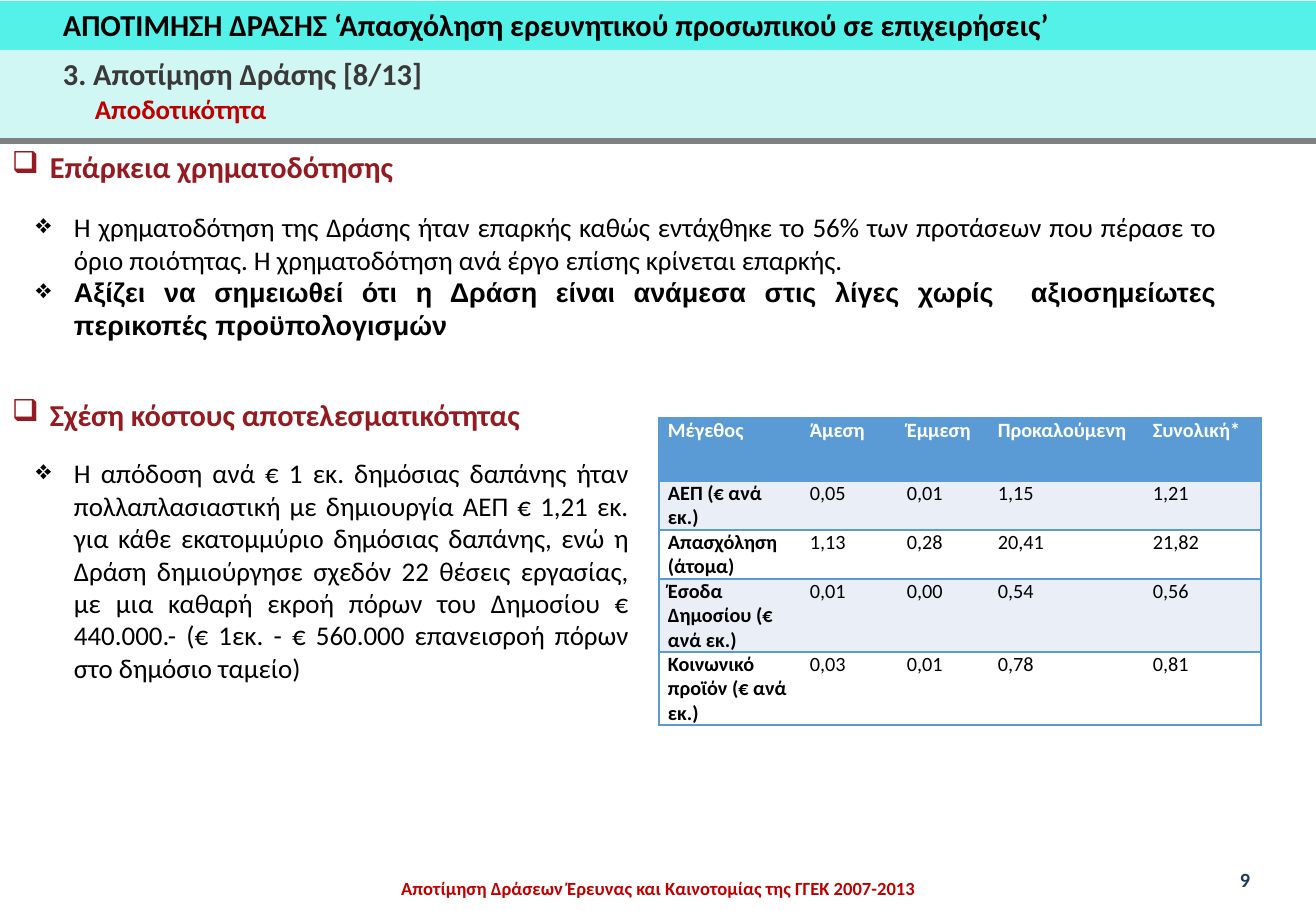
from lxml.etree import SubElement
from pptx import Presentation
from pptx.dml.color import RGBColor
from pptx.enum.shapes import MSO_CONNECTOR as Connector, MSO_SHAPE as Shape
from pptx.enum.text import PP_ALIGN as Align
from pptx.oxml.ns import qn
from pptx.util import Pt

SCALE = 7526
WIDTH, HEIGHT = 1316, 911
INDENT = 38
COLORS = {
    "title band": "53F1E8", "section band": "D0F7F3", "rule": "808080",
    "black": "000000", "white": "FFFFFF", "section": "3B3838",
    "red": "C00000", "heading": "931B21", "page": "203864",
    "table": "5B9BD5", "stripe": "EAEFF7",
}

BANDS = [("title band", 1, 49), ("section band", 50, 91)]
RULE_Y = 141

LABELS = [
    ("ΑΠΟΤΙΜΗΣΗ ΔΡΑΣΗΣ ‘Απασχόληση ερευνητικού προσωπικού σε επιχειρήσεις’",
     (51, 0, 1256, 49), 18, "black"),
    ("3. Αποτίμηση Δράσης [8/13]", (51, 49, 395, 49), 18, "section"),
    ("Αποδοτικότητα", (83, 87, 200, 45), 16, "red"),
    ("9", (1228, 861, 63, 36), 12, "page"),
]
FOOTER = "Aποτίμηση Δράσεων Έρευνας και Καινοτομίας της ΓΓΕΚ 2007-2013"

HEADINGS = [
    ("Επάρκεια χρηματοδότησης", (0, 142, 742, 49)),
    ("Σχέση κόστους αποτελεσματικότητας", (0, 390, 742, 49)),
]
BODIES = [
    ((24, 205, 1205, 143), [
        ("Η χρηματοδότηση της Δράσης ήταν επαρκής καθώς εντάχθηκε το 56% των "
         "προτάσεων που πέρασε το όριο ποιότητας. Η χρηματοδότηση ανά έργο "
         "επίσης κρίνεται επαρκής.", "Calibri", False),
        ("Αξίζει να σημειωθεί ότι η Δράση είναι ανάμεσα στις λίγες χωρίς  "
         "αξιοσημείωτες περικοπές προϋπολογισμών", "Arial", True),
    ]),
    ((24, 451, 617, 242), [
        ("Η απόδοση ανά € 1 εκ. δημόσιας δαπάνης ήταν πολλαπλασιαστική με "
         "δημιουργία ΑΕΠ € 1,21 εκ. για κάθε εκατομμύριο δημόσιας δαπάνης, "
         "ενώ η Δράση δημιούργησε σχεδόν 22 θέσεις εργασίας, με μια καθαρή "
         "εκροή πόρων του Δημοσίου € 440.000.- (€ 1εκ. - € 560.000 "
         "επανεισροή πόρων στο δημόσιο ταμείο)", "Calibri", False),
    ]),
]

TABLE_LEFT, TABLE_TOP = 659, 418
COLUMN_WIDTHS = [142, 97, 91, 155, 117]
ROW_HEIGHTS = [63, 49, 49, 73, 73]
ROWS = [
    ("Μέγεθος", "Άμεση", "Έμμεση", "Προκαλούμενη", "Συνολική*"),
    ("ΑΕΠ (€ ανά εκ.)", "0,05", "0,01", "1,15", "1,21"),
    ("Απασχόληση (άτομα)", "1,13", "0,28", "20,41", "21,82"),
    ("Έσοδα Δημοσίου (€ ανά εκ.)", "0,01", "0,00", "0,54", "0,56"),
    ("Κοινωνικό προϊόν (€ ανά εκ.)", "0,03", "0,01", "0,78", "0,81"),
]


def px(*lengths):
    return [length * SCALE for length in lengths]


def color(name):
    return RGBColor.from_string(COLORS[name])


def style(paragraph, size, color_name, bold=True, font="Calibri"):
    paragraph.font.name = font
    paragraph.font.size = Pt(size)
    paragraph.font.bold = bold
    paragraph.font.color.rgb = color(color_name)


def add_text(box):
    frame = slide.shapes.add_textbox(*px(*box)).text_frame
    frame.word_wrap = True
    return frame


def add_bullet(paragraph, character):
    properties = paragraph._p.get_or_add_pPr()
    properties.set("marL", str(INDENT * SCALE))
    properties.set("indent", str(-INDENT * SCALE))
    SubElement(properties, qn("a:buChar"), char=character)


def add_border(cell, side, visible):
    line = SubElement(cell._tc.get_or_add_tcPr(), qn(f"a:ln{side}"), w=str(Pt(1)))
    if visible:
        fill = SubElement(line, qn("a:solidFill"))
        SubElement(fill, qn("a:srgbClr"), val=COLORS["table"])
    else:
        SubElement(line, qn("a:noFill"))


presentation = Presentation()
presentation.slide_width, presentation.slide_height = px(WIDTH, HEIGHT)
slide = presentation.slides.add_slide(presentation.slide_layouts[6])

for name, top, height in BANDS:
    band = slide.shapes.add_shape(Shape.RECTANGLE, *px(0, top, WIDTH, height))
    band.shadow.inherit = False
    band.fill.solid()
    band.fill.fore_color.rgb = color(name)
    band.line.fill.background()

rule = slide.shapes.add_connector(Connector.STRAIGHT, *px(0, RULE_Y, WIDTH, RULE_Y))
rule.line.color.rgb = color("rule")
rule.line.width = Pt(3)
SubElement(rule._element.spPr, qn("a:effectLst"))

for text, box, size, color_name in LABELS:
    paragraph = add_text(box).paragraphs[0]
    paragraph.text = text
    style(paragraph, size, color_name)

footer = add_text((343, 857, 631, 46))
footer.margin_left = footer.margin_right = footer.margin_top = footer.margin_bottom = 0
paragraph = footer.paragraphs[0]
paragraph.text = FOOTER
paragraph.alignment = Align.CENTER
paragraph.line_spacing = Pt(25.3)
style(paragraph, 11, "red")

for text, box in HEADINGS:
    paragraph = add_text(box).paragraphs[0]
    paragraph.text = text
    add_bullet(paragraph, "❑")
    style(paragraph, 18, "heading")

for box, items in BODIES:
    frame = add_text(box)
    for index, (text, font, bold) in enumerate(items):
        paragraph = frame.add_paragraph() if index else frame.paragraphs[0]
        paragraph.text = text
        paragraph.alignment = Align.JUSTIFY
        add_bullet(paragraph, "❖")
        style(paragraph, 16, "black", bold, font)

table = slide.shapes.add_table(
    len(ROWS), len(COLUMN_WIDTHS),
    *px(TABLE_LEFT, TABLE_TOP, sum(COLUMN_WIDTHS), sum(ROW_HEIGHTS))).table
for column, width in zip(table.columns, px(*COLUMN_WIDTHS)):
    column.width = width
for row, height in zip(table.rows, px(*ROW_HEIGHTS)):
    row.height = height
last_column = len(COLUMN_WIDTHS) - 1
for row_index, row in enumerate(ROWS):
    header = row_index == 0
    fill_name = "table" if header else "stripe" if row_index % 2 else "white"
    for column_index, text in enumerate(row):
        cell = table.cell(row_index, column_index)
        cell.margin_left, cell.margin_right = px(9, 9)
        cell.margin_top = cell.margin_bottom = 0
        add_border(cell, "L", column_index == 0)
        add_border(cell, "R", column_index == last_column)
        add_border(cell, "T", True)
        add_border(cell, "B", True)
        cell.fill.solid()
        cell.fill.fore_color.rgb = color(fill_name)
        paragraph = cell.text_frame.paragraphs[0]
        paragraph.text = text
        style(paragraph, 12, "white" if header else "black", header or column_index == 0)

presentation.save("out.pptx")
